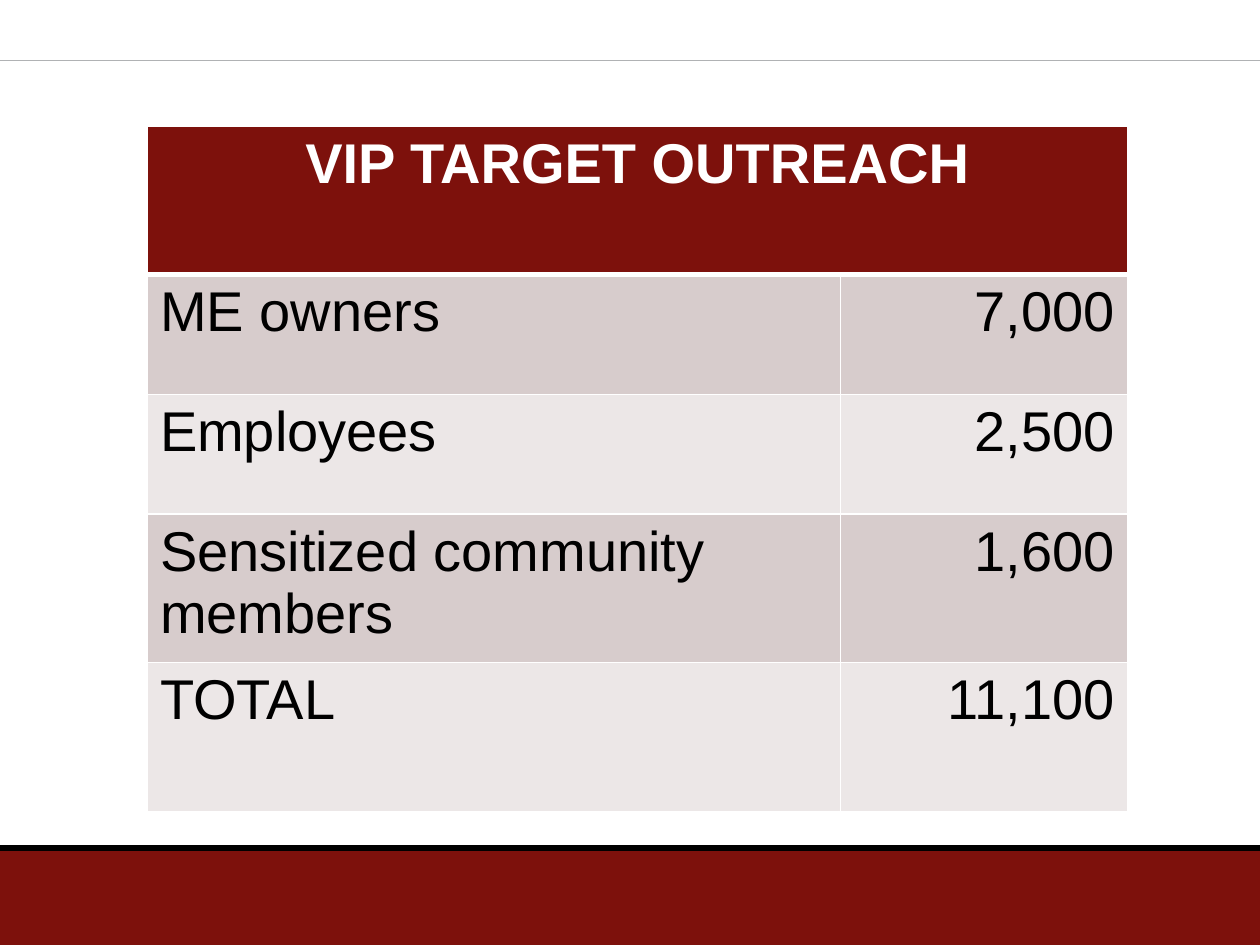
from lxml import etree
from pptx import Presentation
from pptx import util as u
from pptx.dml.color import RGBColor
from pptx.enum import shapes, text
from pptx.oxml.ns import qn

# Content
TITLE = "VIP TARGET OUTREACH"
ROWS = [
    ("ME owners", "7,000"),
    ("Employees", "2,500"),
    ("Sensitized community members", "1,600"),
    ("TOTAL", "11,100"),
]

# Theme and layout, in points
THEME = dict(font="Arial", size=32, maroon="7D110C", white="FFFFFF",
             black="000000", gray="B0B2B4", bands=("D7CCCC", "ECE7E7"))
W, H = 720, 540
FOOTER_H = 54
LEFT, TOP = 84.24, 72
COLS = (396, 164.16)
TALL, SHORT = 84.96, 68.4
HEIGHTS = (TALL, SHORT, SHORT, TALL, TALL)


def rgb(value):
    return RGBColor.from_string(value)


def rule(s, y, color, width):
    line = s.shapes.add_connector(shapes.MSO_CONNECTOR.STRAIGHT,
                                  u.Pt(0), u.Pt(y), u.Pt(W), u.Pt(y))
    line.line.color.rgb = rgb(color)
    line.line.width = u.Pt(width)
    etree.SubElement(line._element.spPr, qn("a:effectLst"))


def write(tf, words, color=THEME["black"], bold=False, align=text.PP_ALIGN.LEFT):
    tf.word_wrap = True
    p = tf.paragraphs[0]
    p.alignment = align
    r = p.add_run()
    r.text = words
    r.font.name = THEME["font"]
    r.font.size = u.Pt(THEME["size"])
    r.font.bold = bold
    r.font.color.rgb = rgb(color)


def paint(cell, fill, bottom=1):
    cell.fill.solid()
    cell.fill.fore_color.rgb = rgb(fill)
    pr = cell._tc.get_or_add_tcPr()
    # Borders come before the fill in a cell's properties
    widths = {"lnL": 1, "lnR": 1, "lnT": 1, "lnB": bottom}
    for i, (tag, width) in enumerate(widths.items()):
        ln = etree.Element(qn("a:" + tag), w=str(u.Pt(width)))
        solid = etree.SubElement(ln, qn("a:solidFill"))
        etree.SubElement(solid, qn("a:srgbClr"), val=THEME["white"])
        pr.insert(i, ln)


def add_outreach_table(s):
    frame = s.shapes.add_table(len(HEIGHTS), len(COLS), u.Pt(LEFT), u.Pt(TOP),
                               u.Pt(sum(COLS)), u.Pt(sum(HEIGHTS)))
    table = frame.table
    table.first_row = table.horz_banding = False
    for col, width in zip(table.columns, COLS):
        col.width = u.Pt(width)
    for row, height in zip(table.rows, HEIGHTS):
        row.height = u.Pt(height)

    # Header across both columns
    head = table.cell(0, 0)
    head.merge(table.cell(0, 1))
    for cell in table.rows[0].cells:
        paint(cell, THEME["maroon"], bottom=3)
    write(head.text_frame, TITLE, color=THEME["white"], bold=True,
          align=text.PP_ALIGN.CENTER)

    # Banded body rows
    aligns = (text.PP_ALIGN.LEFT, text.PP_ALIGN.RIGHT)
    for i, values in enumerate(ROWS):
        for j, value in enumerate(values):
            cell = table.cell(i + 1, j)
            paint(cell, THEME["bands"][i % 2])
            write(cell.text_frame, value, align=aligns[j])
    for cell in table.rows[1].cells:
        cell._tc.tcPr.find(qn("a:lnT")).set("w", str(u.Pt(3)))


def main():
    prs = Presentation()
    prs.slide_width, prs.slide_height = u.Pt(W), u.Pt(H)
    s = prs.slides.add_slide(prs.slide_layouts[6])

    # Footer band and rules
    sp = s.shapes.add_shape(shapes.MSO_SHAPE.RECTANGLE, u.Pt(0),
                            u.Pt(H - FOOTER_H), u.Pt(W), u.Pt(FOOTER_H))
    sp.shadow.inherit = False
    sp.fill.solid()
    sp.fill.fore_color.rgb = rgb(THEME["maroon"])
    sp.line.fill.background()
    rule(s, 34.56, THEME["gray"], 0.75)
    rule(s, 484.56, THEME["black"], 3.75)

    add_outreach_table(s)
    prs.save("out.pptx")


if __name__ == "__main__":
    main()
